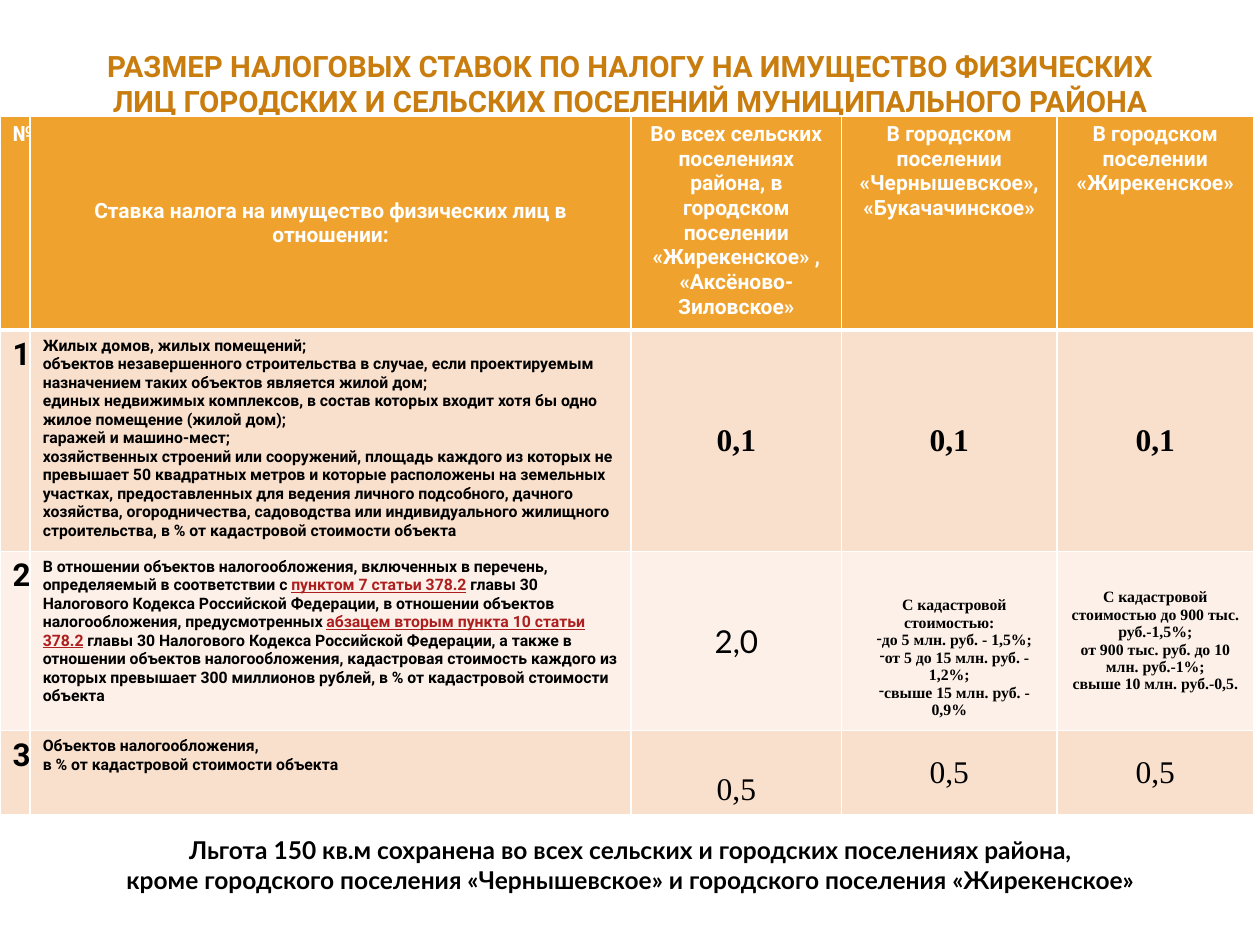
from lxml import etree
from pptx import Presentation
from pptx import util as u
from pptx.dml.color import RGBColor
from pptx.enum import text
from pptx.oxml import ns

Inches, Pt = u.Inches, u.Pt
COLORS = {"title": "C87D0E", "header": "F0A22E", "odd": "F9E0CD", "even": "FCF0E8",
          "white": "FFFFFF", "black": "000000", "link": "AD1F1F"}
SANS, SERIF, LATO = "Roboto", "Times New Roman", "Lato"
COLUMNS = [0.24, 4.77, 1.67, 1.71, 1.56]
ROWS = [1.67, 1.68, 1.35, 0.67]

TITLE = ("РАЗМЕР НАЛОГОВЫХ СТАВОК ПО НАЛОГУ НА ИМУЩЕСТВО ФИЗИЧЕСКИХ ЛИЦ "
         "ГОРОДСКИХ И СЕЛЬСКИХ ПОСЕЛЕНИЙ МУНИЦИПАЛЬНОГО РАЙОНА")
NOTE = ["Льгота 150 кв.м сохранена во всех сельских и городских поселениях района,",
        "кроме городского поселения «Чернышевское» и городского поселения «Жирекенское»"]
HEADERS = [
    ["№"],
    ["Ставка налога на имущество физических лиц в отношении:"],
    ["Во всех сельских поселениях района, в городском поселении «Жирекенское» , "
     "«Аксёново-Зиловское»"],
    ["В городском поселении «Чернышевское»,", "«Букачачинское»"],
    ["В городском поселении «Жирекенское»"],
]
# A paragraph is a string, or a list of runs in which every second one is a link.
OBJECTS = [
    ["Жилых домов, жилых помещений;",
     "объектов незавершенного строительства в случае, если проектируемым назначением "
     "таких объектов является жилой дом;",
     "единых недвижимых комплексов, в состав которых входит хотя бы одно жилое "
     "помещение (жилой дом);",
     "гаражей и машино-мест;",
     "хозяйственных строений или сооружений, площадь каждого из которых не превышает "
     "50 квадратных метров и которые расположены на земельных участках, предоставленных "
     "для ведения личного подсобного, дачного хозяйства, огородничества, садоводства или "
     "индивидуального жилищного строительства, в % от кадастровой стоимости объекта"],
    [["В отношении объектов налогообложения, включенных в перечень, определяемый в "
      "соответствии с ",
      "пунктом 7 статьи 378.2",
      " главы 30 Налогового Кодекса Российской Федерации, в отношении объектов "
      "налогообложения, предусмотренных ",
      "абзацем вторым пункта 10 статьи 378.2",
      " главы 30 Налогового Кодекса Российской Федерации, а также в отношении объектов "
      "налогообложения, кадастровая стоимость каждого из которых превышает 300 миллионов "
      "рублей, в % от кадастровой стоимости объекта"]],
    ["Объектов налогообложения,", "в % от кадастровой стоимости объекта"],
]
TIERS = ["С кадастровой стоимостью:", "до 5 млн. руб. - 1,5%;",
         "от 5 до 15 млн. руб. - 1,2%;", "свыше 15 млн. руб. - 0,9%"]
TIERS_ZHIREKEN = ["С кадастровой стоимостью до 900 тыс. руб.-1,5%;",
                  "от 900 тыс. руб. до 10 млн. руб.-1%;", "свыше 10 млн. руб.-0,5."]


def rgb(name):
    return RGBColor.from_string(COLORS[name])


def write(tf, paragraphs, size, font=SANS, color="black", bold=True, center=True):
    tf.word_wrap = True
    for i, content in enumerate(paragraphs):
        p = tf.paragraphs[0] if i == 0 else tf.add_paragraph()
        p.alignment = text.PP_ALIGN.CENTER if center else text.PP_ALIGN.LEFT
        p.font.size, p.font.name, p.font.bold = Pt(size), font, bold
        p.font.color.rgb = rgb(color)
        for j, part in enumerate([content] if isinstance(content, str) else content):
            r = p.add_run()
            r.text = part
            if j % 2:
                r.font.underline = True
                r.font.color.rgb = rgb("link")


def add_text(s, box, paragraphs, size, font, color):
    sp = s.shapes.add_textbox(*map(Inches, box))
    write(sp.text_frame, paragraphs, size, font, color)


def set_borders(cell, top, bottom):
    """Draw white cell borders; top and bottom widths are in points."""
    tcPr = cell._tc.get_or_add_tcPr()
    for i, (side, width) in enumerate(zip("LRTB", (1, 1, top, bottom))):
        ln = etree.Element(ns.qn(f"a:ln{side}"), w=str(Pt(width)))
        fill = etree.SubElement(ln, ns.qn("a:solidFill"))
        etree.SubElement(fill, ns.qn("a:srgbClr"), val=COLORS["white"])
        tcPr.insert(i, ln)


def add_dashes(paragraphs):
    for i, p in enumerate(paragraphs):
        pPr = p._p.get_or_add_pPr()
        pPr.set("marL", "0")
        pPr.set("indent", str(Inches(0.08)))
        if i:
            bullet = etree.Element(ns.qn("a:buChar"), char="-")
            pPr.insert_element_before(bullet, "a:tabLst", "a:defRPr", "a:extLst")


def add_rates_table(s):
    frame = s.shapes.add_table(len(ROWS), len(COLUMNS), 0, Inches(0.92),
                               Inches(sum(COLUMNS)), Inches(sum(ROWS)))
    table = frame.table
    for column, width in zip(table.columns, COLUMNS):
        column.width = Inches(width)
    for i, (row, height) in enumerate(zip(table.rows, ROWS)):
        row.height = Inches(height)
        for cell in row.cells:
            cell.fill.solid()
            cell.fill.fore_color.rgb = rgb("header" if i == 0 else "odd" if i % 2 else "even")
            set_borders(cell, 3 if i == 1 else 1, 3 if i == 0 else 1)
    return table


def fill_table(table):
    middle = text.MSO_ANCHOR.MIDDLE
    for col, header in enumerate(HEADERS):
        write(table.cell(0, col).text_frame, header, 12, color="white", center=col > 0)
    table.cell(0, 1).vertical_anchor = middle

    for row, objects in enumerate(OBJECTS, 1):
        write(table.cell(row, 0).text_frame, [str(row)], 18, center=False)
        write(table.cell(row, 1).text_frame, objects, 9, center=False)
        for col in range(2, 5):
            table.cell(row, col).vertical_anchor = middle

    for col in range(2, 5):
        write(table.cell(1, col).text_frame, ["0,1"], 18, SERIF)
        write(table.cell(3, col).text_frame, ["0,5"], 18, SERIF, bold=False)
    write(table.cell(2, 2).text_frame, ["2,0"], 18, LATO, bold=False)
    write(table.cell(2, 3).text_frame, TIERS, 9, SERIF)
    write(table.cell(2, 4).text_frame, TIERS_ZHIREKEN, 9, SERIF)
    add_dashes(table.cell(2, 3).text_frame.paragraphs)
    for row, col in ((2, 3), (3, 2)):
        table.cell(row, col).margin_top = Inches(0.32)


def main():
    prs = Presentation()
    prs.slide_width, prs.slide_height = Inches(10), Inches(7.5)
    s = prs.slides.add_slide(prs.slide_layouts[6])
    add_text(s, (0.5, 0.33, 9, 0.58), [TITLE], 16.8, SANS, "title")
    fill_table(add_rates_table(s))
    add_text(s, (0.42, 6.58, 9.17, 0.81), NOTE, 14, LATO, "black")
    prs.save("out.pptx")


if __name__ == "__main__":
    main()
